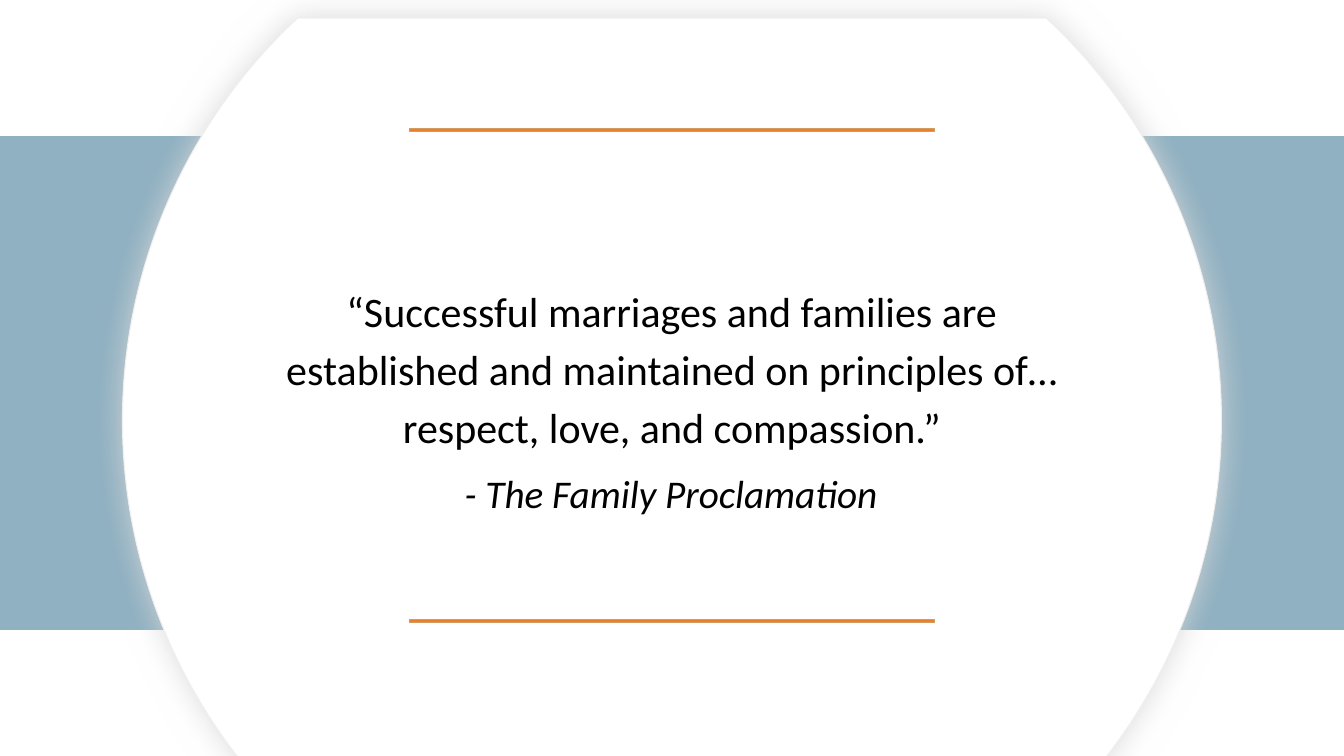
from dataclasses import dataclass
from math import asin, cos, pi, sin, tan

from lxml.etree import SubElement
from pptx import Presentation
from pptx.dml.color import RGBColor
from pptx.enum.shapes import MSO_SHAPE
from pptx.enum.text import MSO_AUTO_SIZE, PP_ALIGN
from pptx.oxml.ns import qn
from pptx.util import Inches, Pt

# Content
QUOTE = ("“Successful marriages and families are established and maintained "
         "on principles of…respect, love, and compassion.”")
SOURCE = "- The Family Proclamation"


@dataclass(frozen=True)
class Theme:
    font: str = "Calibri"
    quote_size: int = 30
    source_size: int = 28
    text: str = "000000"
    band: str = "90B1C2"
    disc: str = "FFFFFF"
    disc_edge: str = "EFEFEF"
    glow: str = "D8D8D8"
    rule: str = "ED7D31"
    rule_edge: str = "D09D5C"
    line_width: float = 0.75
    glow_blur: int = 22


THEME = Theme()

# Layout in inches
WIDTH, HEIGHT = 13.33, 7.5
CENTER_X = WIDTH / 2
BAND_TOP, BAND_HEIGHT = 0.18 * HEIGHT, 4.9
DISC_Y, DISC_RADIUS = 4.17, 5.45
DISC_TOP, DISC_BOTTOM = 0.18, 7.68
RULE_WIDTH, RULE_HEIGHT = 5.2, 0.03
RULE_TOPS = (1.28, 6.15)
QUOTE_BOX = (2.42, 2.66, 8.49, 1.94)
SOURCE_BOX = (4.51, 4.61, 4.32, 0.57)


def paint(shape, fill, edge):
    shape.shadow.inherit = False
    shape.fill.solid()
    shape.fill.fore_color.rgb = RGBColor.from_string(fill)
    shape.line.color.rgb = RGBColor.from_string(edge)
    shape.line.width = Pt(THEME.line_width)


def add_bar(slide, box, fill, edge):
    bar = slide.shapes.add_shape(MSO_SHAPE.RECTANGLE, *map(Inches, box))
    paint(bar, fill, edge)


def add_glow(shape):
    effects = shape._element.spPr.find(qn("a:effectLst"))
    shadow = SubElement(effects, qn("a:outerShdw"),
                        blurRad=str(Pt(THEME.glow_blur)),
                        dist="0", dir="0", algn="ctr", rotWithShape="0")
    color = SubElement(shadow, qn("a:srgbClr"), val=THEME.glow)
    SubElement(color, qn("a:alpha"), val="90000")


def bend(segment, start, end):
    """Turn a straight side of the disc into the arc between two angles."""
    pull = 4 / 3 * tan((end - start) / 4)
    controls = [(cos(start) - pull * sin(start), sin(start) + pull * cos(start)),
                (cos(end) + pull * sin(end), sin(end) - pull * cos(end))]
    segment.tag = qn("a:cubicBezTo")
    for index, (x, y) in enumerate(controls):
        control = segment.makeelement(qn("a:pt"), {
            "x": str(Inches(DISC_RADIUS * (1 + x))),
            "y": str(Inches(DISC_Y - DISC_TOP + DISC_RADIUS * y))})
        segment.insert(index, control)


def add_disc(slide):
    """Circle cut flat at the top and at the bottom."""
    top = asin((DISC_TOP - DISC_Y) / DISC_RADIUS)
    bottom = asin((DISC_BOTTOM - DISC_Y) / DISC_RADIUS)
    angles = [pi - top, top, 0, bottom, pi - bottom, pi, pi - top]
    corners = [(Inches(CENTER_X + DISC_RADIUS * cos(angle)),
                Inches(DISC_Y + DISC_RADIUS * sin(angle))) for angle in angles]
    builder = slide.shapes.build_freeform(*corners[0])
    builder.add_line_segments(corners[1:], close=True)
    disc = builder.convert_to_shape()

    sides = list(disc._element.iter(qn("a:lnTo")))
    for side in (1, 2, 4, 5):
        bend(sides[side], angles[side], angles[side + 1])
    paint(disc, THEME.disc, THEME.disc_edge)
    add_glow(disc)


def add_text(slide, box, text, size, inset_y, align, spacing=1.0, italic=False):
    frame = slide.shapes.add_textbox(*map(Inches, box)).text_frame
    frame.word_wrap = True
    frame.auto_size = MSO_AUTO_SIZE.SHAPE_TO_FIT_TEXT
    frame.margin_left = frame.margin_right = Inches(0.1)
    frame.margin_top = frame.margin_bottom = Inches(inset_y)
    frame.text = text
    paragraph = frame.paragraphs[0]
    paragraph.alignment = align
    paragraph.line_spacing = spacing
    font = paragraph.runs[0].font
    font.name, font.size, font.italic = THEME.font, Pt(size), italic
    font.color.rgb = RGBColor.from_string(THEME.text)


def main():
    deck = Presentation()
    deck.slide_width, deck.slide_height = Inches(WIDTH), Inches(HEIGHT)
    slide = deck.slides.add_slide(deck.slide_layouts[6])

    # Band and disc behind the quote
    add_bar(slide, (0, BAND_TOP, WIDTH, BAND_HEIGHT), THEME.band, THEME.band)
    add_disc(slide)

    # Rules above and below the quote
    for top in RULE_TOPS:
        add_bar(slide, (CENTER_X - RULE_WIDTH / 2, top, RULE_WIDTH, RULE_HEIGHT),
                THEME.rule, THEME.rule_edge)

    # Quote and its source
    add_text(slide, QUOTE_BOX, QUOTE, THEME.quote_size, 0.1,
             PP_ALIGN.CENTER, spacing=1.15)
    add_text(slide, SOURCE_BOX, SOURCE, THEME.source_size, 0.05,
             PP_ALIGN.LEFT, italic=True)

    deck.save("out.pptx")


if __name__ == "__main__":
    main()
